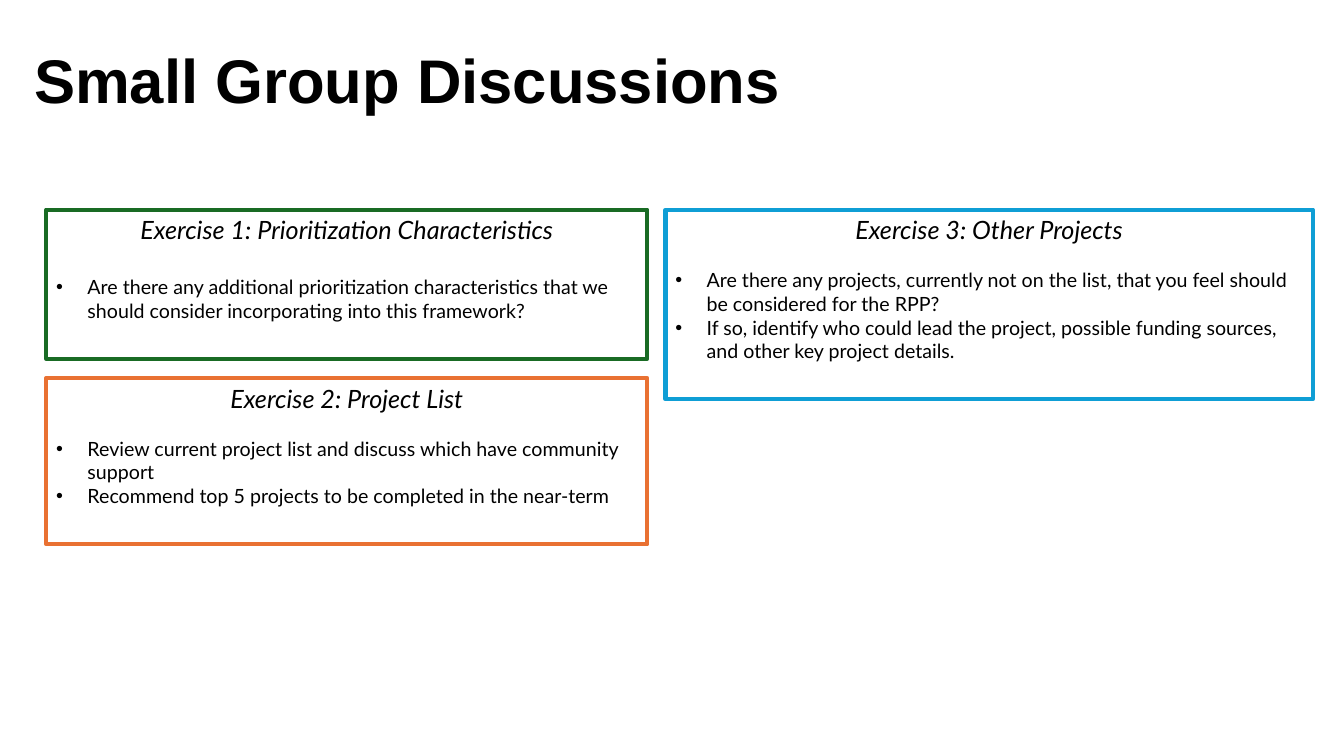
from dataclasses import dataclass

from lxml import etree
from pptx import Presentation
from pptx import util as u
from pptx.dml import color
from pptx.enum import shapes, text
from pptx.oxml import ns

HUES = {
    "ink": "000000",
    "paper": "FFFFFF",
    "green": "196B24",
    "orange": "E97132",
    "blue": "0F9ED5",
}
INDENT = u.Inches(0.31)


@dataclass
class Card:
    left: float
    top: float
    width: float
    height: float
    hue: str
    title: str
    points: list[str]
    gap: float = 16.8


CARDS = [
    Card(0.46, 2.08, 5.96, 1.48, "green", "Exercise 1: Prioritization Characteristics", [
        "Are there any additional prioritization characteristics that we should "
        "consider incorporating into this framework?",
    ], gap=21.6),
    Card(0.46, 3.75, 5.96, 1.65, "orange", "Exercise 2: Project List", [
        "Review current project list and discuss which have community support",
        "Recommend top 5 projects to be completed in the near-term",
    ]),
    Card(6.6, 2.08, 6.42, 1.88, "blue", "Exercise 3: Other Projects", [
        "Are there any projects, currently not on the list, that you feel should "
        "be considered for the RPP?",
        "If so, identify who could lead the project, possible funding sources, "
        "and other key project details.",
    ]),
]


def rgb(name: str) -> color.RGBColor:
    return color.RGBColor.from_string(HUES[name])


def add_dot(para) -> None:
    props = para._p.get_or_add_pPr()
    props.set("marL", str(INDENT))
    props.set("indent", str(-INDENT))
    tint = etree.SubElement(props, ns.qn("a:buClr"))
    etree.SubElement(tint, ns.qn("a:srgbClr"), val=HUES["ink"])
    etree.SubElement(props, ns.qn("a:buFont"), typeface="Arial")
    etree.SubElement(props, ns.qn("a:buChar"), char="•")


def write(para, words: str, *, size: float, font: str = "Lato", bold: bool = False,
          slant: bool = False, dot: bool = False, gap: float = 0,
          align=text.PP_ALIGN.LEFT) -> None:
    para.alignment = align
    if gap:
        para.space_before = u.Pt(gap)
    if dot:
        add_dot(para)
    run = para.add_run()
    run.text = words
    run.font.name = font
    run.font.size = u.Pt(size)
    run.font.bold = bold
    run.font.italic = slant
    run.font.color.rgb = rgb("ink")


def draw_card(slide, card: Card) -> None:
    box = slide.shapes.add_shape(
        shapes.MSO_SHAPE.RECTANGLE, u.Inches(card.left), u.Inches(card.top),
        u.Inches(card.width), u.Inches(card.height))
    box.shadow.inherit = False
    box.fill.solid()
    box.fill.fore_color.rgb = rgb("paper")
    box.line.color.rgb = rgb(card.hue)
    box.line.width = u.Pt(3)
    frame = box.text_frame
    frame.word_wrap = True
    frame.vertical_anchor = text.MSO_ANCHOR.TOP
    write(frame.paragraphs[0], card.title, size=18, slant=True,
          align=text.PP_ALIGN.CENTER)
    for rank, point in enumerate(card.points):
        write(frame.add_paragraph(), point, size=14, dot=True,
              gap=0 if rank else card.gap)


def draw_title(slide, words: str) -> None:
    box = slide.shapes.add_textbox(
        u.Inches(0.24), u.Inches(0.37), u.Inches(12.18), u.Inches(0.84))
    box.text_frame.word_wrap = True
    write(box.text_frame.paragraphs[0], words, size=44, font="Arial", bold=True)


def main() -> None:
    deck = Presentation()
    deck.slide_width = u.Inches(13.33)
    deck.slide_height = u.Inches(7.5)
    slide = deck.slides.add_slide(deck.slide_layouts[6])
    for card in CARDS:
        draw_card(slide, card)
    draw_title(slide, "Small Group Discussions")
    deck.save("out.pptx")


if __name__ == "__main__":
    main()
